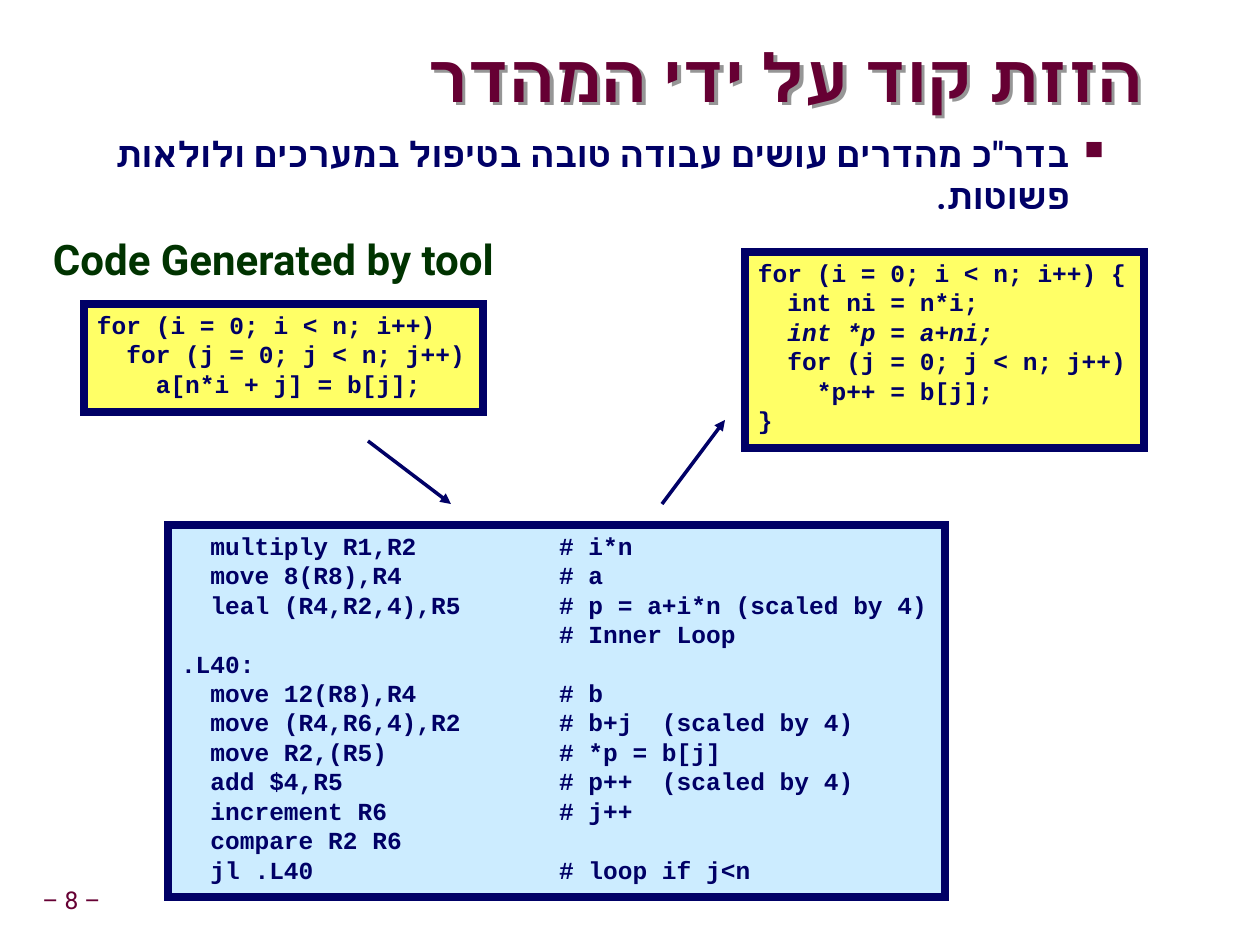
"""Build a slide on code motion done by the compiler."""
import pptx
import pptx.dml.color
import pptx.enum.shapes
import pptx.enum.text
import pptx.oxml
import pptx.oxml.ns
import pptx.util

RGB = pptx.dml.color.RGBColor
ALIGN = pptx.enum.text.PP_ALIGN
ANCHOR = pptx.enum.text.MSO_ANCHOR
NAVY = RGB(0x00, 0x00, 0x66)
MAROON = RGB(0x66, 0x00, 0x33)
GREEN = RGB(0x00, 0x33, 0x00)
GRAY = RGB(0x96, 0x96, 0x96)
YELLOW = RGB(0xFF, 0xFF, 0x66)
SKY = RGB(0xCC, 0xEC, 0xFF)
EMU_PER_PX = 914400 / 126
NS = pptx.oxml.ns.nsdecls("a")

TITLE = "הזזת קוד על ידי המהדר"
BULLET = "בדר\"כ מהדרים עושים עבודה טובה בטיפול במערכים ולולאות פשוטות. "
HEADING = "Code Generated by tool"
PAGE = "– 8 –"
SOURCE = [
    "for (i = 0; i < n; i++)",
    "  for (j = 0; j < n; j++)",
    "    a[n*i + j] = b[j];",
]
ASSEMBLY = [
    ("  multiply R1,R2", "# i*n"),
    ("  move 8(R8),R4", "# a"),
    ("  leal (R4,R2,4),R5", "# p = a+i*n (scaled by 4)"),
    ("", "# Inner Loop"),
    (".L40:",),
    ("  move 12(R8),R4", "# b"),
    ("  move (R4,R6,4),R2", "# b+j  (scaled by 4)"),
    ("  move R2,(R5)", "# *p = b[j]"),
    ("  add $4,R5", "# p++  (scaled by 4)"),
    ("  increment R6", "# j++"),
    ("  compare R2 R6",),
    ("  jl .L40", "# loop if j<n"),
]
POINTER_LINE = "  int *p = a+ni;"
OPTIMIZED = [
    "for (i = 0; i < n; i++) {",
    "  int ni = n*i;",
    POINTER_LINE,
    "  for (j = 0; j < n; j++)",
    "    *p++ = b[j];",
    "}",
]
CODE_BOXES = [
    (SOURCE, (84, 304, 399, 108), YELLOW),
    (["\t".join(row) for row in ASSEMBLY], (168, 525, 777, 372), SKY),
    (OPTIMIZED, (745, 252, 399, 196), YELLOW),
]
ARROWS = [(368, 441, 451, 504), (662, 504, 725, 420)]
COMMENT_TAB = 378


def px(n):
    return pptx.util.Emu(round(n * EMU_PER_PX))


def add_xml(parent, xml):
    parent.append(pptx.oxml.parse_xml(xml.replace(" ", f" {NS} ", 1)))


def set_frame(tf, inset_x, inset_y, anchor=ANCHOR.TOP, wrap=True):
    tf.margin_left = tf.margin_right = px(inset_x)
    tf.margin_top = tf.margin_bottom = px(inset_y)
    tf.vertical_anchor = anchor
    tf.word_wrap = wrap
    tf.auto_size = pptx.enum.text.MSO_AUTO_SIZE.NONE


def write(p, text, size, color, font="Roboto", bold=True, italic=False,
          align=ALIGN.LEFT, rtl=False, spacing=1.0, before=0):
    p.alignment = align
    p.line_spacing = spacing
    p.space_before = pptx.util.Pt(before)
    if rtl:
        p._p.get_or_add_pPr().set("rtl", "1")
    r = p.add_run()
    r.text = text
    r.font.size = pptx.util.Pt(size)
    r.font.bold = bold
    r.font.italic = italic
    r.font.color.rgb = color
    r.font.name = font
    add_xml(r._r.get_or_add_rPr(), f'<a:cs typeface="{font}"/>')


def add_title(s):
    sp = s.shapes.title
    sp.left, sp.top, sp.width, sp.height = map(px, (42, 42, 1101, 79))
    sp.fill.background()
    add_xml(sp._element.spPr, '<a:effectLst >'
            '<a:outerShdw dist="35921" dir="2700000" algn="ctr" rotWithShape="0">'
            f'<a:srgbClr val="{GRAY}"/></a:outerShdw></a:effectLst>')
    set_frame(sp.text_frame, 0, 0, ANCHOR.MIDDLE)
    write(sp.text_frame.paragraphs[0], TITLE, 38, MAROON,
          align=ALIGN.RIGHT, rtl=True, spacing=0.87)


def add_body(s):
    tf = s.shapes.add_textbox(*map(px, (40, 126, 1145, 271))).text_frame
    set_frame(tf, 13, 6)
    p = tf.paragraphs[0]
    write(p, BULLET, 20, NAVY, align=ALIGN.RIGHT, rtl=True, before=5)
    ppr = p._p.get_or_add_pPr()
    ppr.set("marL", str(px(102)))
    ppr.set("indent", str(px(-34)))
    add_xml(ppr, f'<a:buClr ><a:srgbClr val="{MAROON}"/></a:buClr>')
    add_xml(ppr, '<a:buSzPct val="75000"/>')
    add_xml(ppr, '<a:buChar char="■"/>')
    write(tf.add_paragraph(), HEADING, 24, GREEN, spacing=0.95, before=12)


def add_code(s, lines, box, fill):
    sp = s.shapes.add_shape(pptx.enum.shapes.MSO_SHAPE.RECTANGLE, *map(px, box))
    sp.shadow.inherit = False
    sp.fill.solid()
    sp.fill.fore_color.rgb = fill
    sp.line.color.rgb = NAVY
    sp.line.width = pptx.util.Pt(4.5)
    add_xml(sp.line._get_or_add_ln(), '<a:miter lim="800000"/>')
    tf = sp.text_frame
    set_frame(tf, 13, 6)
    for i, line in enumerate(lines):
        p = tf.add_paragraph() if i else tf.paragraphs[0]
        write(p, line, 14, NAVY, font="Courier New", italic=line == POINTER_LINE)
        if "\t" in line:
            add_xml(p._p.get_or_add_pPr(), '<a:tabLst >'
                    f'<a:tab pos="{px(COMMENT_TAB)}" algn="l"/></a:tabLst>')


def add_arrow(s, ends):
    sp = s.shapes.add_connector(pptx.enum.shapes.MSO_CONNECTOR.STRAIGHT, *map(px, ends))
    sp.line.color.rgb = NAVY
    sp.line.width = pptx.util.Pt(2)
    add_xml(sp.line._get_or_add_ln(), '<a:tailEnd type="triangle"/>')
    add_xml(sp._element.spPr, '<a:effectLst />')


def main():
    prs = pptx.Presentation()
    prs.slide_width, prs.slide_height = px(1260), px(945)
    s = prs.slides.add_slide(prs.slide_layouts[5])
    add_title(s)
    add_body(s)
    for lines, box, fill in CODE_BOXES:
        add_code(s, lines, box, fill)
    for ends in ARROWS:
        add_arrow(s, ends)
    tf = s.shapes.add_textbox(*map(px, (30, 882, 83, 39))).text_frame
    set_frame(tf, 6, 6, ANCHOR.MIDDLE, wrap=False)
    write(tf.paragraphs[0], PAGE, 14, MAROON, bold=False, align=ALIGN.CENTER, spacing=0.9)
    prs.save("out.pptx")


if __name__ == "__main__":
    main()
